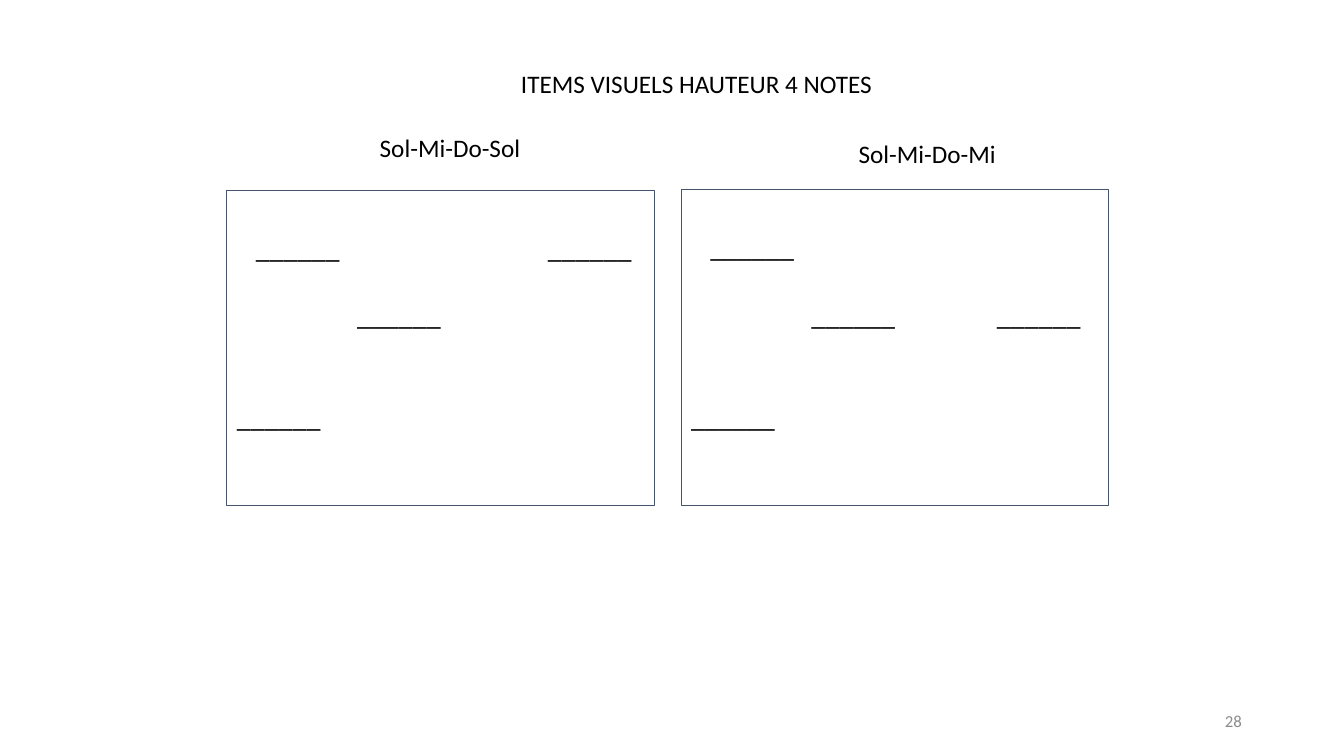
from lxml import etree
from pptx import Presentation
from pptx.dml.color import RGBColor
from pptx.enum.shapes import MSO_SHAPE
from pptx.enum.text import MSO_ANCHOR, PP_ALIGN
from pptx.oxml.ns import qn
from pptx.util import Cm, Pt

RECTANGLE = MSO_SHAPE.RECTANGLE
TOP, MIDDLE = MSO_ANCHOR.TOP, MSO_ANCHOR.MIDDLE
LEFT, RIGHT = PP_ALIGN.LEFT, PP_ALIGN.RIGHT

BLACK = RGBColor(0x00, 0x00, 0x00)
GREY = RGBColor(0x8C, 0x8C, 0x8C)
BORDER = RGBColor(0x44, 0x54, 0x6A)

FONT = "Calibri"
NOTE_MARK = "______"
NOTE_SIZE = 20
NOTE_LINE = 24.4  # line height in points

# Each pitch: empty lines above it, then distances of its notes from the left
SOL_MI_DO_SOL = [(0, [0.48, 7.84]), (1, [3.03]), (2, [0])]
SOL_MI_DO_MI = [(0, [0.48]), (1, [3.03, 7.7]), (2, [0])]


def style(paragraph, size, color=BLACK, align=LEFT):
    paragraph.alignment = align
    font = paragraph.font
    font.name, font.size, font.color.rgb = FONT, Pt(size), color


def add_label(slide, text, left, top, width, size=18, color=BLACK,
              align=LEFT, anchor=TOP):
    frame = slide.shapes.add_textbox(Cm(left), Cm(top), Cm(width), Cm(1.02)).text_frame
    frame.word_wrap = True
    frame.vertical_anchor = anchor
    frame.text = text
    style(frame.paragraphs[0], size, color, align)


def set_tab_stops(paragraph, positions):
    tab_list = etree.SubElement(paragraph._p.get_or_add_pPr(), qn("a:tabLst"))
    for position in positions:
        etree.SubElement(tab_list, qn("a:tab"), pos=str(Cm(position)), algn="l")


def add_note_panel(slide, left, top, pitches):
    """Draw a frame whose rows of marks show the height of each note."""
    panel = slide.shapes.add_shape(RECTANGLE, Cm(left), Cm(top), Cm(10.77), Cm(7.95))
    panel.shadow.inherit = False
    panel.fill.background()
    panel.line.color.rgb = BORDER
    panel.line.width = Pt(0.75)
    frame = panel.text_frame
    frame.word_wrap = True
    frame.vertical_anchor = TOP
    frame.margin_top = Cm(1)
    for index, (empty_lines, positions) in enumerate(pitches):
        row = frame.paragraphs[0] if index == 0 else frame.add_paragraph()
        row.text = "".join(("\t" if position else "") + NOTE_MARK
                           for position in positions)
        row.space_before = Pt(empty_lines * NOTE_LINE)
        stops = [position for position in positions if position]
        if stops:
            set_tab_stops(row, stops)
        style(row, NOTE_SIZE)


def main():
    presentation = Presentation()
    presentation.slide_width, presentation.slide_height = Cm(33.87), Cm(19.05)
    slide = presentation.slides.add_slide(presentation.slide_layouts[6])

    add_note_panel(slide, 5.72, 4.8, SOL_MI_DO_SOL)
    add_label(slide, "Sol-Mi-Do-Sol", 9.32, 3.2, 4.22)
    add_label(slide, "Sol-Mi-Do-Mi", 21.39, 3.35, 4.22)
    add_note_panel(slide, 17.17, 4.78, SOL_MI_DO_MI)
    add_label(slide, "ITEMS VISUELS HAUTEUR 4 NOTES", 12.88, 1.6, 9.55)
    add_label(slide, "28", 23.93, 17.65, 7.62, 12, GREY, RIGHT, MIDDLE)

    presentation.save("out.pptx")


if __name__ == "__main__":
    main()
